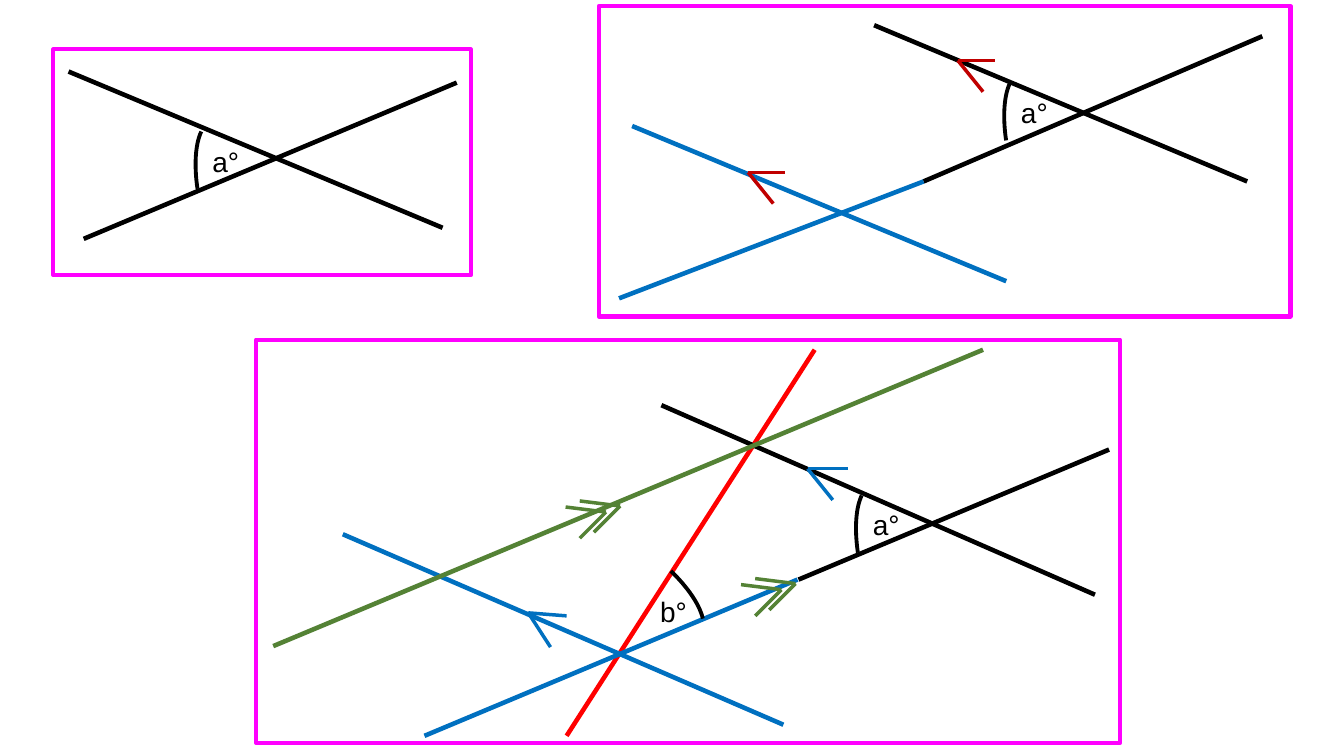
from dataclasses import dataclass

from lxml import etree
from pptx import Presentation
from pptx import util as u
from pptx.dml.color import RGBColor
from pptx.enum import shapes, text
from pptx.oxml import ns


@dataclass(frozen=True)
class Theme:
    black: str = "000000"
    pink: str = "FF00FF"
    red: str = "FF0000"
    dark: str = "C00000"
    blue: str = "0070C0"
    green: str = "548235"
    font: str = "Arial"
    size: float = 20
    thick: float = 3.25
    frame: float = 3
    curve: float = 2.75
    thin: float = 2.5


class Board:
    """Draws angle diagrams on one slide in a shared style."""

    def __init__(self, slide, theme):
        self.slide, self.theme = slide, theme
        self.shapes = slide.shapes

    def group(self):
        self.shapes = self.slide.shapes.add_group_shape().shapes

    def put(self, item, style):
        for name, value in style.items():
            setattr(item, name, value)

    def stroke(self, item, color, width):
        item.line.color.rgb = RGBColor.from_string(color)
        item.line.width = u.Pt(width)

    def line(self, start, end, color, width=None):
        ends = [u.Inches(n) for n in (*start, *end)]
        item = self.shapes.add_connector(shapes.MSO_CONNECTOR.STRAIGHT, *ends)
        self.stroke(item, color, width or self.theme.thick)
        etree.SubElement(item._element.spPr, ns.qn("a:effectLst"))

    def arrow(self, tip, arms, color):
        for dx, dy in arms:
            end = (tip[0] + dx, tip[1] + dy)
            self.line(tip, end, color, self.theme.thin)

    def pair(self, tip):
        for x, y in (tip, (tip[0] - 0.14, tip[1] + 0.06)):
            self.arrow((x, y), ((-0.26, 0.26), (-0.4, -0.05)), self.theme.green)

    def shape(self, kind, box, color, width):
        item = self.shapes.add_shape(kind, *[u.Inches(n) for n in box])
        item.shadow.inherit = False
        item.fill.background()
        self.stroke(item, color, width)
        return item

    def frame(self, *box):
        kind = shapes.MSO_SHAPE.RECTANGLE
        self.shape(kind, box, self.theme.pink, self.theme.frame)

    def label(self, words, x, y):
        box = self.shapes.add_textbox(*[u.Inches(n) for n in (x, y, 0.76, 0.44)])
        box.text_frame.word_wrap = True
        box.text_frame.auto_size = text.MSO_AUTO_SIZE.SHAPE_TO_FIT_TEXT
        para = box.text_frame.paragraphs[0]
        para.alignment = text.PP_ALIGN.CENTER
        run = para.add_run()
        run.text = words
        self.put(run.font, {"name": self.theme.font, "size": u.Pt(self.theme.size)})
        run.font.color.rgb = RGBColor.from_string(self.theme.black)

    def angle(self, words, x, y, shift=(0.12, -0.2), turn=347.2):
        self.label(words, x, y)
        box = (x + shift[0], y + shift[1], 0.6, 1.55)
        kind = shapes.MSO_SHAPE.ARC
        arc = self.shape(kind, box, self.theme.black, self.theme.curve)
        arc.adjustments[0], arc.adjustments[1] = 168.44, 199.73
        arc.rotation = turn
        arc._element.spPr.xfrm.set("flipH", "1")


def cross(board):
    ink = board.theme
    board.group()
    board.line((0.68, 0.71), (4.39, 2.26), ink.black)
    board.line((0.83, 2.37), (4.53, 0.82), ink.black)
    board.angle("a°", 1.86, 1.38)
    board.frame(0.53, 0.49, 4.14, 2.24)


def parallel(board):
    ink = board.theme
    arms = ((0.37, 0), (0.25, 0.31))
    board.group()
    board.line((8.67, 0.25), (12.37, 1.8), ink.black)
    board.line((9.16, 1.8), (12.52, 0.36), ink.black)
    board.arrow((9.5, 0.6), arms, ink.dark)
    board.line((6.27, 1.25), (9.98, 2.79), ink.blue)
    board.line((6.14, 2.96), (9.16, 1.8), ink.blue)
    board.arrow((7.42, 1.71), arms, ink.dark)
    board.angle("a°", 9.88, 0.9)
    board.frame(5.94, 0.06, 6.86, 3.08)


def network(board):
    ink = board.theme
    board.group()
    board.line((8.08, 3.47), (5.62, 7.3), ink.red)
    board.line((6.56, 4.02), (10.86, 5.9), ink.black)
    board.line((7.92, 5.75), (11, 4.46), ink.black)
    board.arrow((8.01, 4.65), ((0.4, 0), (0.25, 0.31)), ink.blue)
    board.line((3.4, 5.3), (7.77, 7.19), ink.blue)
    board.line((4.21, 7.3), (7.91, 5.75), ink.blue)
    board.arrow((5.24, 6.08), ((0.38, 0.03), (0.22, 0.34)), ink.blue)
    board.angle("a°", 8.41, 4.99)
    board.line((2.71, 6.41), (9.75, 3.47), ink.green)
    board.pair((6.15, 5.02))
    board.pair((7.89, 5.79))
    board.angle("b°", 6.3, 5.85, (-0.25, -0.83), 129.6)
    board.frame(2.54, 3.37, 8.57, 4)


def main():
    deck = Presentation()
    deck.slide_width, deck.slide_height = u.Inches(13.33), u.Inches(7.5)
    board = Board(deck.slides.add_slide(deck.slide_layouts[6]), Theme())
    for draw in (cross, parallel, network):
        draw(board)
    deck.save("out.pptx")


if __name__ == "__main__":
    main()
